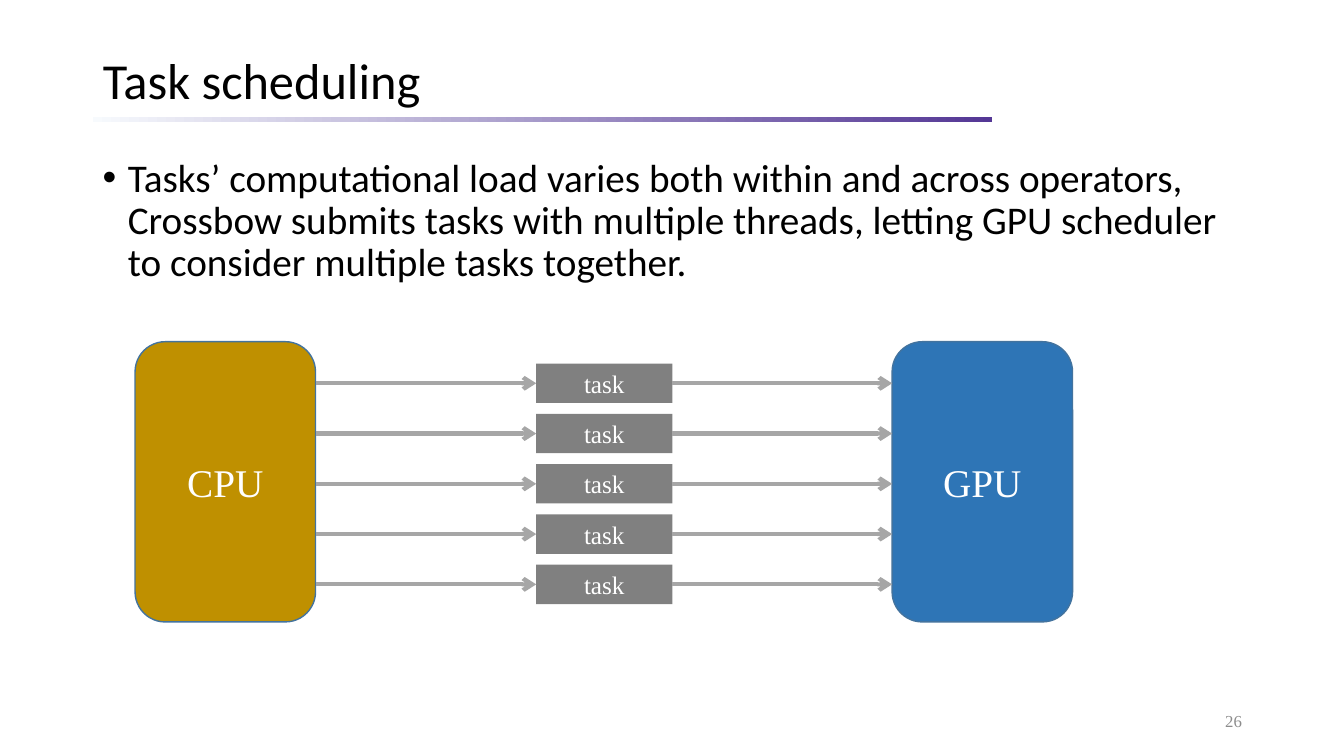
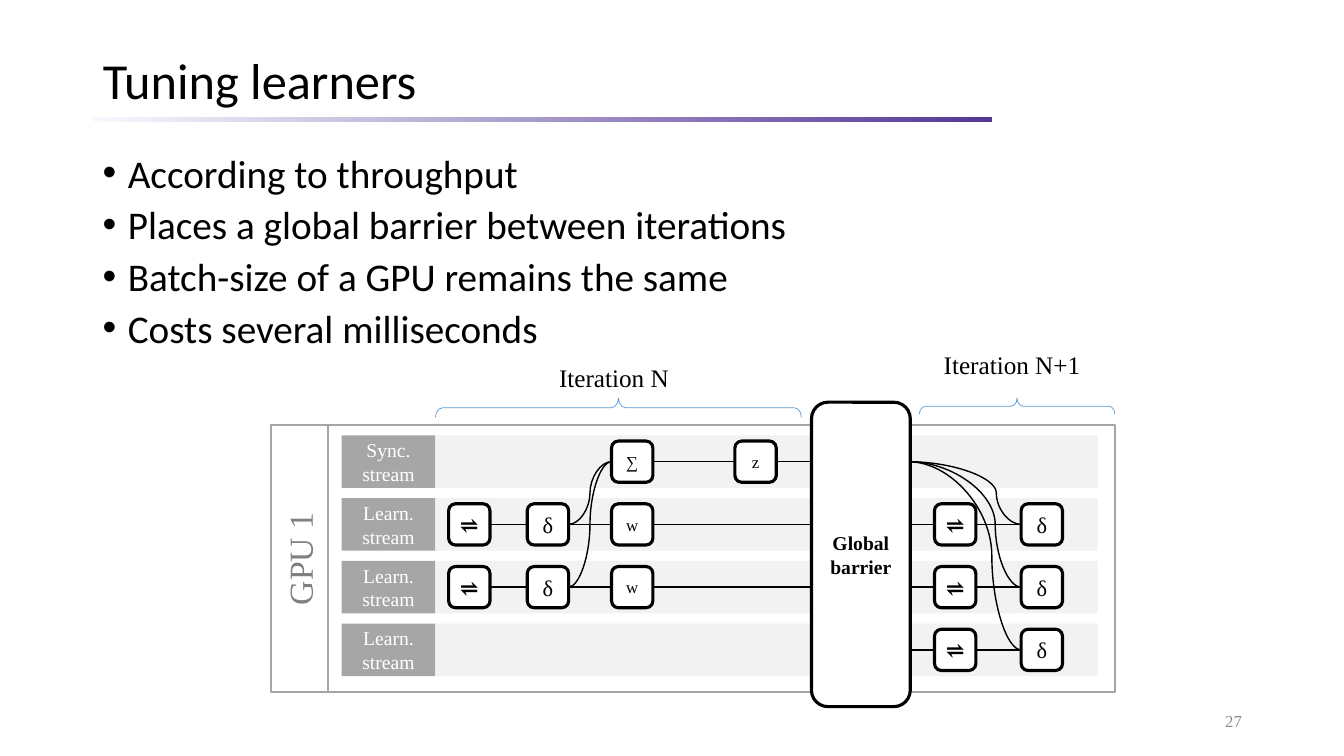
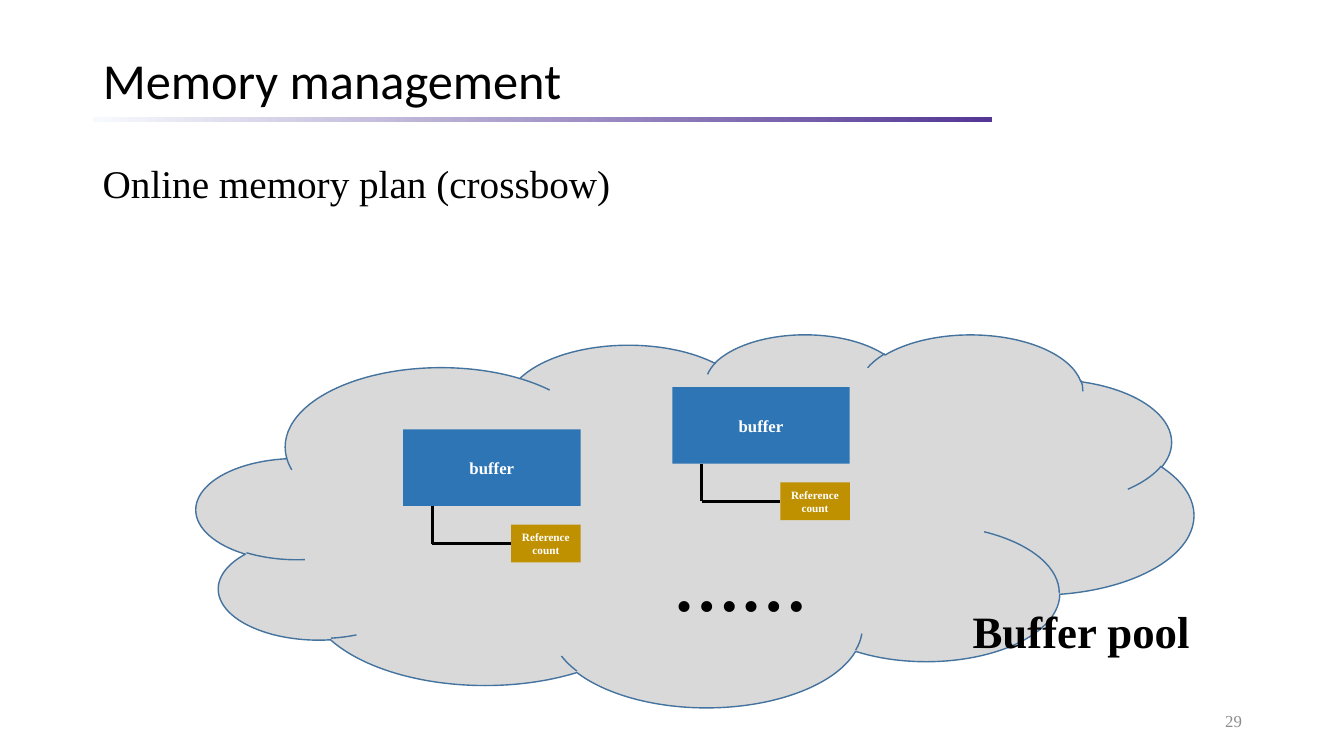
from lxml import etree
from pptx import Presentation
from pptx import util as u
from pptx.dml.color import RGBColor
from pptx.enum import shapes, text
from pptx.oxml.ns import qn

HUES = {
    "ink": "000000", "paper": "FFFFFF", "pale": "F7FAFD", "plum": "543795",
    "page": "8C8C8C", "gold": "BF9000", "blue": "2E75B6", "edge": "43739E",
    "slate": "808080", "steel": "A6A6A6", "frame": "A5A5A5", "lane": "F2F2F2",
    "cloud": "D9D9D9", "brace": "5B9BD5",
}
SANS, SERIF = "Calibri", "Times New Roman"
KIND, WIRE = shapes.MSO_SHAPE, shapes.MSO_CONNECTOR
ALIGN, ANCHOR = text.PP_ALIGN, text.MSO_ANCHOR


def hue(name):
    return RGBColor.from_string(HUES[name])


class Deck:
    """Slide style and current slide; lengths are percentages of the slide's width and height."""

    def __init__(self):
        self.show = Presentation()
        self.show.slide_width = u.Inches(13.333)
        self.show.slide_height = u.Inches(7.5)

    def wide(self, part):
        return u.Emu(round(self.show.slide_width * part / 100))

    def high(self, part):
        return u.Emu(round(self.show.slide_height * part / 100))

    def area(self, x, y, w, h):
        return self.wide(x), self.high(y), self.wide(w), self.high(h)

    def page(self, title, number):
        self.slide = self.show.slides.add_slide(self.show.slide_layouts[5])
        self.art = self.slide.shapes
        head = self.art.title
        head.left, head.top, head.width, head.height = self.area(6.9, 6.53, 67.8, 8.93)
        self.fill_text(head.text_frame, [title], 36, font=SANS, anchor=ANCHOR.MIDDLE, lead=0.9)
        rule = self.box((6.9, 15.5, 66.9, 0.7))
        rule.fill.gradient()
        rule.fill.gradient_angle = 0
        for stop, name in zip(rule.fill.gradient_stops, ("pale", "plum")):
            stop.color.rgb = hue(name)
        self.label((70.65, 92.67, 22.5, 5.33), str(number), 12, color="page",
                   align=ALIGN.RIGHT, anchor=ANCHOR.MIDDLE)

    def group(self):
        self.art = self.slide.shapes.add_group_shape().shapes

    def fill_text(self, frame, lines, size, color="ink", font=SERIF, bold=False,
                  align=ALIGN.LEFT, anchor=ANCHOR.TOP, lead=None, bullet=False):
        frame.word_wrap = True
        frame.auto_size = text.MSO_AUTO_SIZE.NONE
        frame.vertical_anchor = anchor
        for i, line in enumerate(lines):
            para = frame.paragraphs[0] if i == 0 else frame.add_paragraph()
            para.text = line
            para.alignment = align
            if lead:
                para.line_spacing = lead
            if i:
                para.space_before = u.Pt(10)
            if bullet:
                props = para._p.get_or_add_pPr()
                props.set("marL", str(u.Inches(0.25)))
                props.set("indent", str(-u.Inches(0.25)))
                etree.SubElement(props, qn("a:buFont")).set("typeface", "Arial")
                etree.SubElement(props, qn("a:buChar")).set("char", "•")
            para.font.name = font
            para.font.size = u.Pt(size)
            para.font.bold = bold
            para.font.color.rgb = hue(color)

    def label(self, at, words, size, **style):
        self.fill_text(self.art.add_textbox(*self.area(*at)).text_frame, [words], size, **style)

    def points(self, height, lines, lead):
        frame = self.art.add_textbox(*self.area(6.9, 20.27, 86.25, height)).text_frame
        self.fill_text(frame, lines, 28, font=SANS, lead=lead, bullet=True)

    def box(self, at, words=None, size=18, fill=None, line=None, weight=1,
            kind=KIND.RECTANGLE, color="paper", bold=False):
        shape = self.art.add_shape(kind, *self.area(*at))
        shape.shadow.inherit = False
        if fill:
            shape.fill.solid()
            shape.fill.fore_color.rgb = hue(fill)
        else:
            shape.fill.background()
        if line:
            shape.line.color.rgb = hue(line)
            shape.line.width = u.Pt(weight)
        else:
            shape.line.fill.background()
        if words:
            frame = shape.text_frame
            frame.margin_left = frame.margin_right = 0
            frame.margin_top = frame.margin_bottom = 0
            self.fill_text(frame, [words], size, color=color, bold=bold,
                           align=ALIGN.CENTER, anchor=ANCHOR.MIDDLE)
        return shape

    def node(self, x, y, sign):
        big = sign in "⇌δ"
        self.box((x - 1.54, y - 2.73, 3.08, 5.46), sign, 16 if big else 12, "paper", "ink",
                 2.25, KIND.ROUNDED_RECTANGLE, "ink", sign == "⇌")

    def brace(self, at):
        shape = self.box(at, line="brace", weight=0.5, kind=KIND.LEFT_BRACE)
        x, y, w, h = self.area(*at)
        shape.left, shape.top = x + (w - h) // 2, y + (h - w) // 2
        shape.width, shape.height = h, w
        shape.rotation = 90
        shape.adjustments[0] = 0.38

    def wire(self, x1, y1, x2, y2, color="ink", weight=1, arrow=False, bend=None):
        kind = WIRE.CURVE if bend else WIRE.STRAIGHT
        link = self.art.add_connector(kind, self.wide(x1), self.high(y1),
                                      self.wide(x2), self.high(y2))
        link.line.color.rgb = hue(color)
        link.line.width = u.Pt(weight)
        props = link.element.spPr
        if arrow:
            etree.SubElement(props.find(qn("a:ln")), qn("a:tailEnd")).set("type", "arrow")
        if bend:
            guide = etree.SubElement(props.find(".//" + qn("a:avLst")), qn("a:gd"))
            guide.set("name", "adj1")
            guide.set("fmla", f"val {round(bend * 100000)}")
        etree.SubElement(props, qn("a:effectLst"))


def tasks(deck):
    deck.page("Task scheduling", 26)
    deck.points(29.73, ["Tasks’ computational load varies both within and across operators, "
                        "Crossbow submits tasks with multiple threads, letting GPU scheduler "
                        "to consider multiple tasks together."], 0.9)
    for x, name, fill in ((10.05, "CPU", "gold"), (66.38, "GPU", "blue")):
        deck.box((x, 45.2, 13.43, 37.07), name, 28, fill, "edge", kind=KIND.ROUNDED_RECTANGLE)
    for i in range(5):
        y = 50.7 + 6.65 * i
        deck.box((39.9, y - 2.6, 10.13, 5.2), "task", 18, "slate")
        for start, end in ((23.48, 39.9), (50.03, 66.38)):
            deck.wire(start, y, end, y, "steel", 3, arrow=True)


def tuning(deck):
    deck.page("Tuning learners", 27)
    deck.points(26.93, ["According to throughput", "Places a global barrier between iterations",
                        "Batch-size of a GPU remains the same", "Costs several milliseconds"], 0.8)
    deck.box((24.38, 56.27, 58.58, 35.33), line="frame", weight=1.5)
    side = deck.box((20.18, 56.27, 4.2, 35.33), "GPU 1", 24, line="frame", weight=1.5,
                    color="slate")
    side.text_frame._txBody.bodyPr.set("vert", "vert270")
    rows = [61.07 + 8.3 * i for i in range(4)]
    for y, name in zip(rows, ["Sync. stream"] + ["Learn. stream"] * 3):
        deck.box((25.43, y - 3.47, 6.97, 6.94), name, 14, "steel")
        deck.box((32.4, y - 3.47, 49.28, 6.94), fill="lane")
    for y, start, end in zip(rows, (47.04, 34.92, 34.92, 64), (64, 77.52, 77.52, 77.52)):
        deck.wire(start, y, end, y)
    cols = (34.92, 40.77, 47.04, 56.22, 71.07, 77.52)
    for y, signs in zip(rows, ("  ∑z  ", "⇌δw ⇌δ", "⇌δw ⇌δ", "    ⇌δ")):
        for x, sign in zip(cols, signs):
            if sign != " ":
                deck.node(x, y, sign)
    for y in rows[1:3]:
        deck.wire(42.3, y, 45.5, rows[0], bend=0.5)
    for y, bend in zip(rows[1:], (0.78, 0.77, 0.74)):
        deck.wire(67.58, rows[0], 75.98, y, bend=bend)
    deck.brace((32.4, 52.67, 27.23, 2.53))
    deck.brace((68.4, 52.67, 14.55, 2.13))
    deck.label((35.48, 47.2, 20.4, 6), "Iteration N", 18, align=ALIGN.CENTER)
    deck.label((65.1, 45.6, 20.4, 6), "Iteration N+1", 18, align=ALIGN.CENTER)
    deck.box((60.38, 53.2, 7.35, 40.27), "Global barrier", 14, "paper", "ink", 2.25,
             KIND.ROUNDED_RECTANGLE, "ink", True)


def memory(deck):
    deck.page("Memory management", 29)
    deck.label((6.9, 20.4, 64.8, 7.6), "Online memory plan (crossbow)", 28)
    deck.box((14.63, 44.13, 74.18, 49.33), fill="cloud", line="edge", kind=KIND.CLOUD)
    deck.label((49.35, 71.33, 14.7, 12.13), "……", 48, bold=True)
    deck.label((71.63, 79.2, 22.05, 8.53), "Buffer pool", 32, bold=True)
    for x, y in ((30, 56.8), (50.03, 51.2)):
        deck.group()
        deck.box((x, y, 13.2, 10.13), "buffer", 12, "blue", bold=True)
        deck.box((x + 8.03, y + 12.6, 5.18, 5), "Reference count", 8, "gold", bold=True)
        deck.wire(x + 2.18, y + 10.13, x + 2.18, y + 15.1, weight=2.25)
        deck.wire(x + 2.18, y + 15.1, x + 8.03, y + 15.1, weight=2.25)


def main():
    deck = Deck()
    for draw in (tasks, tuning, memory):
        draw(deck)
    deck.show.save("out.pptx")


if __name__ == "__main__":
    main()
